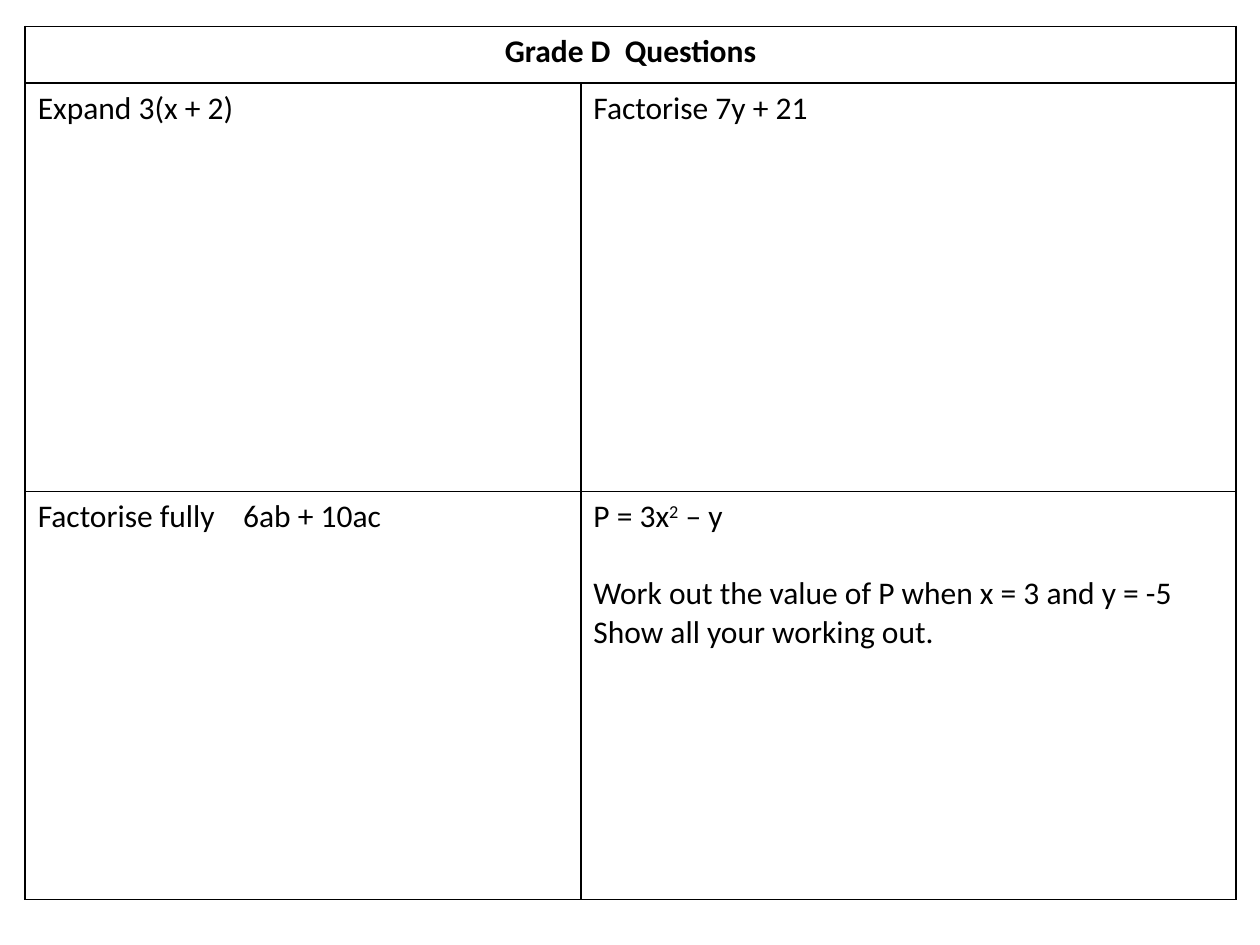
from lxml import etree
from pptx import Presentation
from pptx.dml.color import RGBColor
from pptx.enum.text import PP_ALIGN
from pptx.oxml.ns import qn
from pptx.util import Inches, Pt

CENTER = PP_ALIGN.CENTER
BLACK = RGBColor(0x00, 0x00, 0x00)
WHITE = RGBColor(0xFF, 0xFF, 0xFF)
FONT = "Calibri"
TEXT_SIZE = Pt(18)
BORDER_WIDTH = Pt(1)
COLUMN_WIDTHS = (4.41, 5.2)
ROW_HEIGHTS = (0.45, 3.24, 3.24)
TITLE = "Grade D  Questions"
QUESTIONS = (
    ("Expand 3(x + 2)", "Factorise 7y + 21"),
    (
        "Factorise fully\t6ab + 10ac",
        "P = 3x\nWork out the value of P when x = 3 and y = -5\nShow all your working out.",
    ),
)


def add_borders(cell):
    properties = cell._tc.get_or_add_tcPr()
    for index, side in enumerate(("lnL", "lnR", "lnT", "lnB")):
        line = etree.Element(qn(f"a:{side}"), w=str(BORDER_WIDTH))
        fill = etree.SubElement(line, qn("a:solidFill"))
        etree.SubElement(fill, qn("a:srgbClr"), val=str(BLACK))
        properties.insert(index, line)


def add_tab_stop(para, position):
    stops = etree.SubElement(para._p.get_or_add_pPr(), qn("a:tabLst"))
    etree.SubElement(stops, qn("a:tab"), pos=str(position), algn="l")


def add_formula_end(para):
    square = para.add_run()
    square.text = "2"
    square._r.get_or_add_rPr().set("baseline", "30000")
    para.add_run().text = " – y"


def format_cell(cell, bold):
    cell.fill.solid()
    cell.fill.fore_color.rgb = WHITE
    add_borders(cell)
    for para in cell.text_frame.paragraphs:
        para.font.size = TEXT_SIZE
        for span in para.runs:
            span.font.name = FONT
            span.font.size = TEXT_SIZE
            span.font.bold = bold
            span.font.color.rgb = BLACK


def add_question_table(page, left, top, width, height):
    frame = page.shapes.add_table(
        len(ROW_HEIGHTS), len(COLUMN_WIDTHS), left, top, width, height
    )
    table = frame.table
    table.first_row = False
    table.horz_banding = False
    for column, column_width in zip(table.columns, COLUMN_WIDTHS):
        column.width = Inches(column_width)
    for row, row_height in zip(table.rows, ROW_HEIGHTS):
        row.height = Inches(row_height)

    title = table.cell(0, 0)
    title.merge(table.cell(0, 1))
    title.text_frame.text = TITLE
    title.text_frame.paragraphs[0].alignment = CENTER

    for row_index, questions in enumerate(QUESTIONS, start=1):
        for column_index, question in enumerate(questions):
            table.cell(row_index, column_index).text_frame.text = question

    add_tab_stop(table.cell(2, 0).text_frame.paragraphs[0], Inches(1.63))
    formula, task = table.cell(2, 1).text_frame.paragraphs[:2]
    add_formula_end(formula)
    task.space_before = Pt(22)

    for row_index, row in enumerate(table.rows):
        for cell in row.cells:
            format_cell(cell, bold=row_index == 0)


def main():
    deck = Presentation()
    deck.slide_width = Inches(10)
    deck.slide_height = Inches(7.5)
    page = deck.slides.add_slide(deck.slide_layouts[6])
    add_question_table(
        page,
        Inches(0.2),
        Inches(0.21),
        Inches(sum(COLUMN_WIDTHS)),
        Inches(sum(ROW_HEIGHTS)),
    )
    deck.save("out.pptx")


if __name__ == "__main__":
    main()
